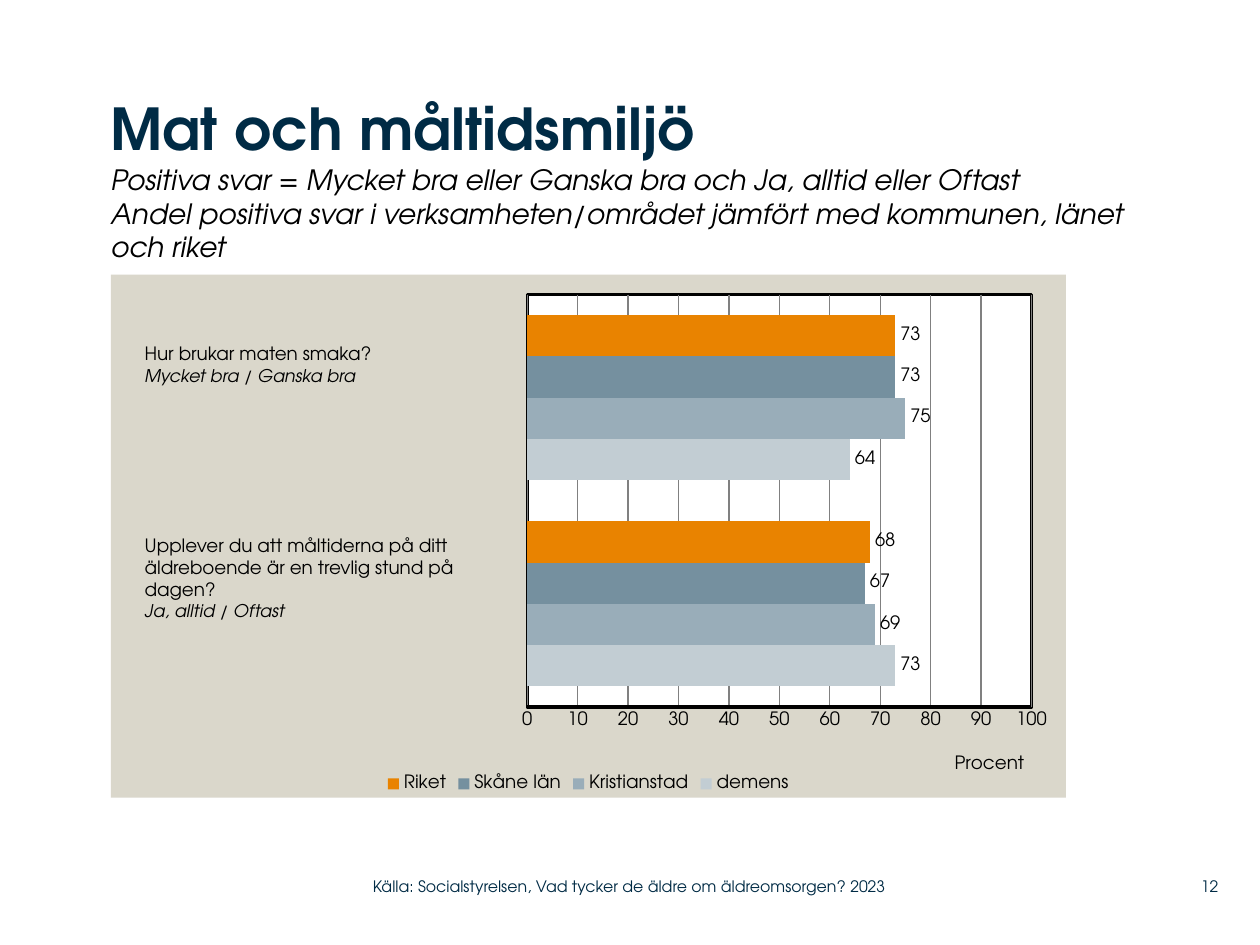
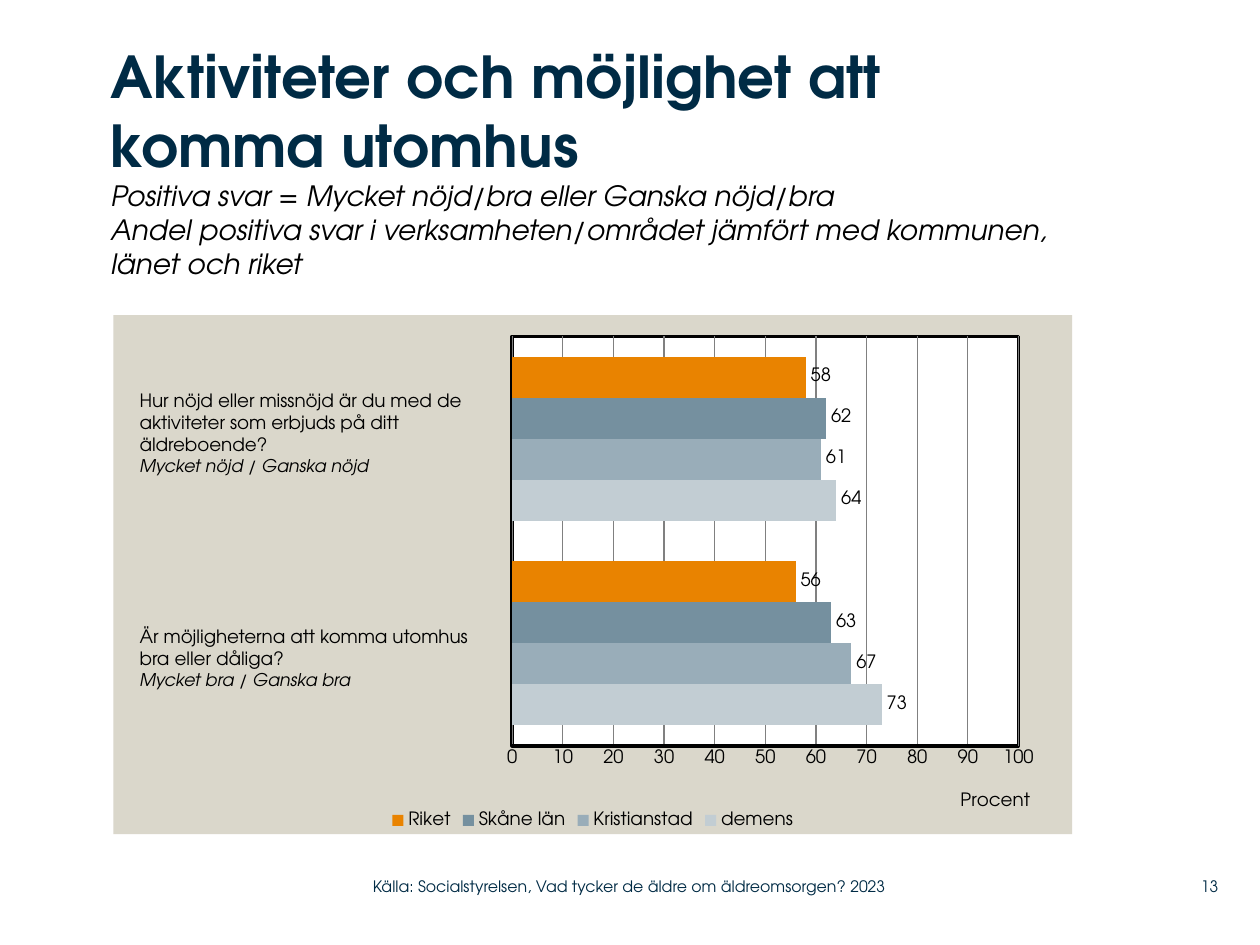
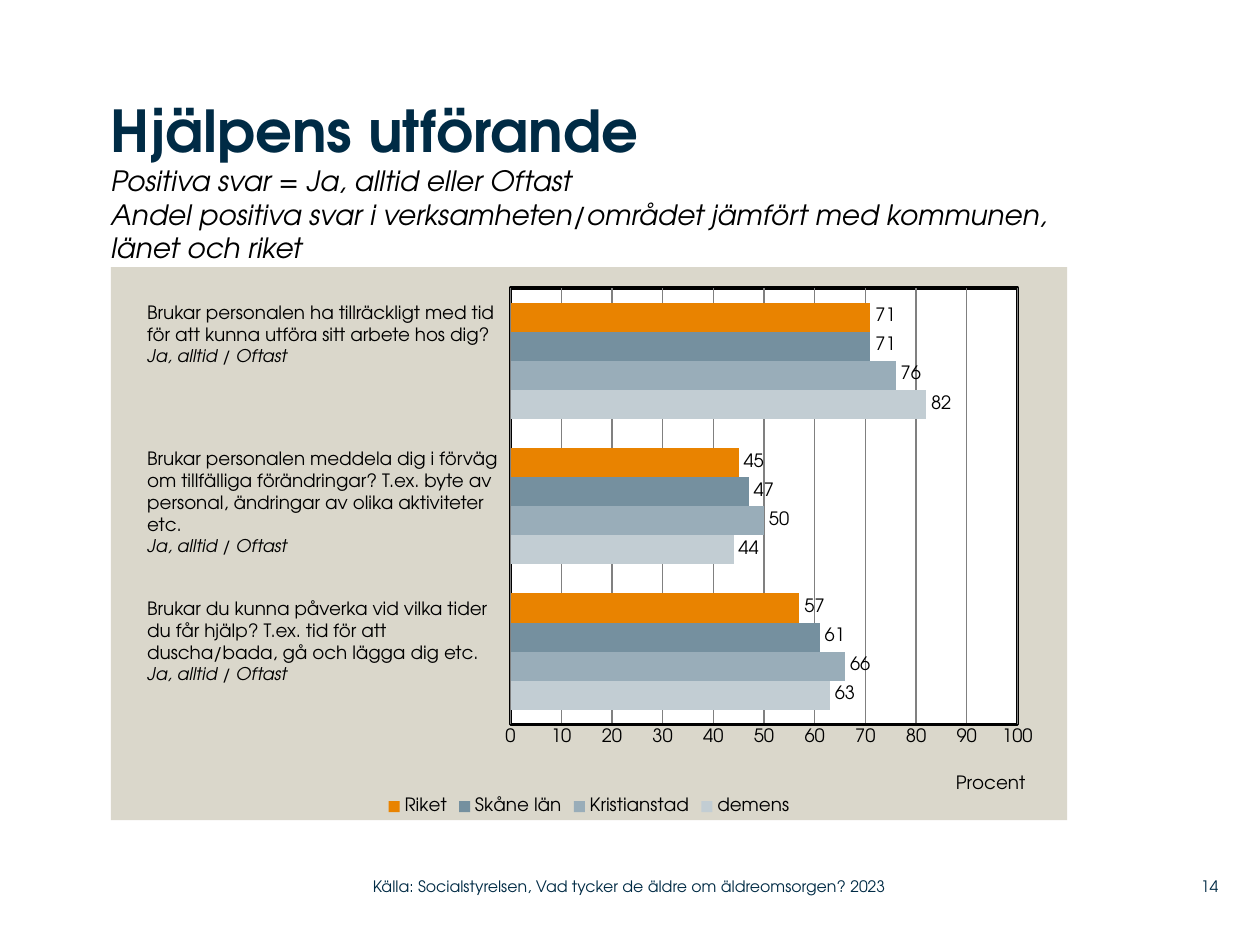
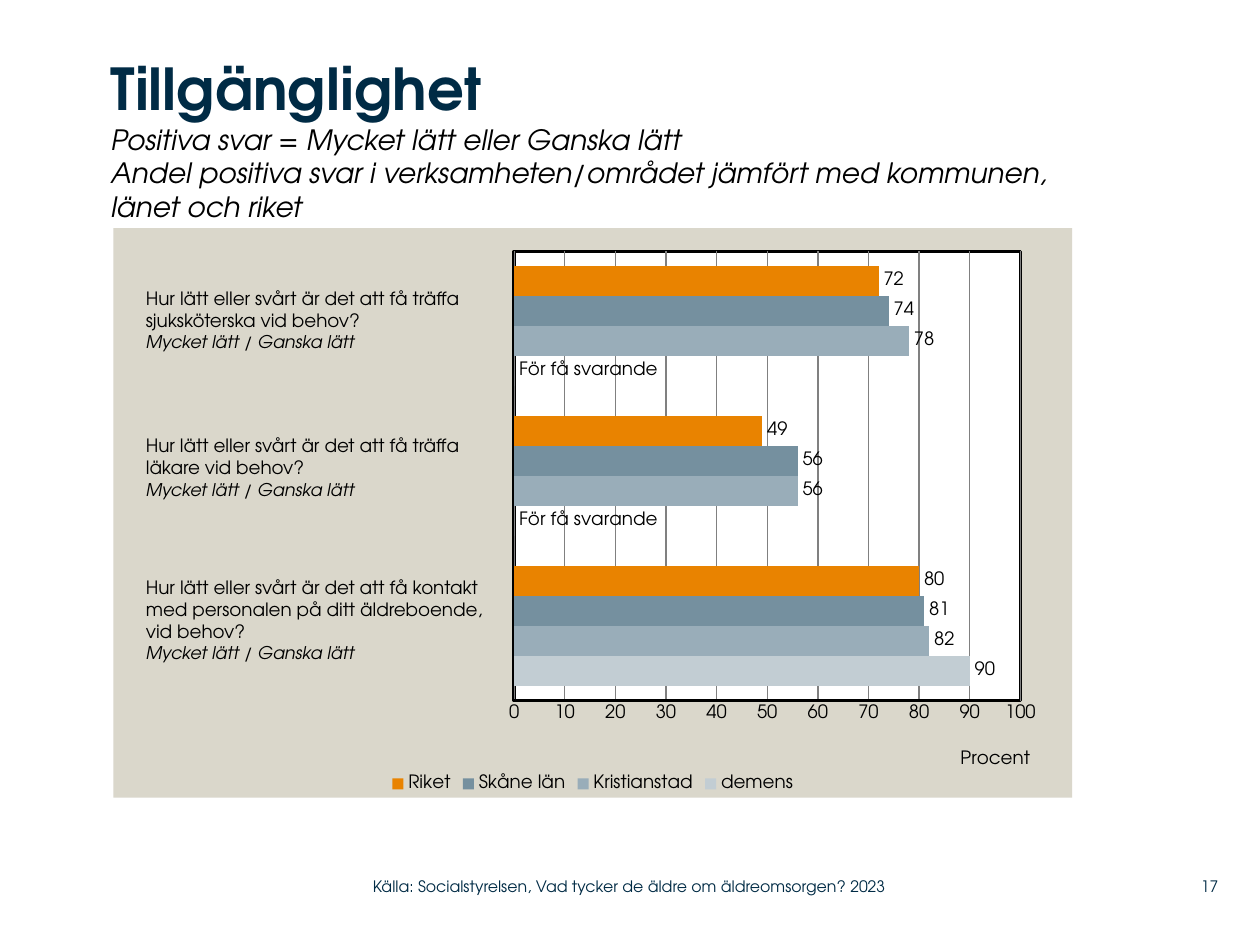
from lxml import etree
from pptx import Presentation
from pptx import util as u
from pptx.chart import data as chart_data
from pptx.dml import color
from pptx.enum import chart as kinds, text
from pptx.oxml import ns, parse_xml

FONT = "TeX Gyre Adventor"
NAVY, BLACK, WHITE = "002B45", "000000", "FFFFFF"
PANEL, GRID = "DAD7CB", "808080"
SERIES = {"demens": "C2CDD3", "Kristianstad": "99ADB9",
          "Skåne län": "75909F", "Riket": "E98300"}
COMPARISON = ("Andel positiva svar i verksamheten/området jämfört med "
              "kommunen, länet och riket")
SOURCE = "Källa: Socialstyrelsen, Vad tycker de äldre om äldreomsorgen? 2023"
TOO_FEW = "För få svarande"

SLIDES = [
    dict(
        number=12, title="Mat och måltidsmiljö", title_box=(0.88, 0.74, 8.42, 1.44),
        positive="Positiva svar = Mycket bra eller Ganska bra och Ja, alltid eller Oftast",
        chart_box=(0.88, 2.18, 7.58, 4.15), plot=(0.436, 0.038, 0.528, 0.789),
        values=[(73, 64), (69, 75), (67, 73), (68, 73)],
        questions=[
            ((1.05, 2.67, 2.77, 0.63),
             ["Hur brukar maten smaka?", "Mycket bra / Ganska bra"]),
            ((1.05, 4.19, 2.77, 0.98),
             ["Upplever du att måltiderna på ditt äldreboende är en trevlig stund på",
              "dagen?", "Ja, alltid / Oftast"]),
        ]),
    dict(
        number=13, title="Aktiviteter och möjlighet att komma utomhus",
        title_box=(0.88, 0.32, 7.8, 1.89),
        positive="Positiva svar = Mycket nöjd/bra eller Ganska nöjd/bra",
        chart_box=(0.9, 2.5, 7.61, 4.12), plot=(0.416, 0.041, 0.528, 0.789),
        values=[(73, 64), (67, 61), (63, 62), (56, 58)],
        questions=[
            ((1.01, 3.04, 3, 0.98),
             ["Hur nöjd eller missnöjd är du med de aktiviteter som erbjuds på ditt "
              "äldreboende?", "Mycket nöjd / Ganska nöjd"]),
            ((1.01, 4.91, 3.01, 0.81),
             ["Är möjligheterna att komma utomhus", "bra eller dåliga?",
              "Mycket bra / Ganska bra"]),
        ]),
    dict(
        number=14, title="Hjälpens utförande", title_box=(0.88, 0.75, 7.79, 1.21),
        positive="Positiva svar = Ja, alltid eller Oftast",
        chart_box=(0.88, 2.12, 7.59, 4.39), plot=(0.418, 0.038, 0.53, 0.789),
        values=[(63, 44, 82), (66, 50, 76), (61, 47, 71), (57, 45, 71)],
        questions=[
            ((1.07, 2.34, 2.97, 0.81),
             ["Brukar personalen ha tillräckligt med tid",
              "för att kunna utföra sitt arbete hos dig?", "Ja, alltid / Oftast"]),
            ((1.07, 3.5, 2.99, 0.98),
             ["Brukar personalen meddela dig i förväg om tillfälliga förändringar? "
              "T.ex. byte av personal, ändringar av olika aktiviteter etc.",
              "Ja, alltid / Oftast"]),
            ((1.07, 4.69, 2.97, 0.81),
             ["Brukar du kunna påverka vid vilka tider", "du får hjälp? T.ex. tid för att",
              "duscha/bada, gå och lägga dig etc.", "Ja, alltid / Oftast"]),
        ]),
    dict(
        number=17, title="Tillgänglighet", title_box=(0.88, 0.42, 7.77, 1.39),
        positive="Positiva svar = Mycket lätt eller Ganska lätt",
        chart_box=(0.9, 1.81, 7.61, 4.52), plot=(0.418, 0.041, 0.528, 0.789),
        values=[(90, 0, 0), (82, 56, 78), (81, 56, 74), (80, 49, 72)],
        questions=[
            ((1.06, 2.23, 2.99, 0.81),
             ["Hur lätt eller svårt är det att få träffa sjuksköterska vid behov?",
              "Mycket lätt / Ganska lätt"]),
            ((1.06, 3.4, 2.93, 0.81),
             ["Hur lätt eller svårt är det att få träffa", "läkare vid behov?",
              "Mycket lätt / Ganska lätt"]),
            ((1.06, 4.52, 3.01, 0.98),
             ["Hur lätt eller svårt är det att få kontakt",
              "med personalen på ditt äldreboende,", "vid behov?",
              "Mycket lätt / Ganska lätt"]),
        ]),
]


def rgb(value):
    return color.RGBColor.from_string(value)


def inches(box):
    return [u.Inches(length) for length in box]


def style(font, size, fill=BLACK, bold=False, italic=False):
    font.name, font.size = FONT, u.Pt(size)
    font.bold, font.italic = bold, italic
    font.color.rgb = rgb(fill)


def add_text(page, box, lines, inset=True, align=None, anchor=text.MSO_ANCHOR.TOP):
    frame = page.shapes.add_textbox(*inches(box)).text_frame
    frame.word_wrap = True
    frame.vertical_anchor = anchor
    if not inset:
        frame.margin_left = frame.margin_right = 0
        frame.margin_top = frame.margin_bottom = 0
    for index, (words, look) in enumerate(lines):
        para = frame.add_paragraph() if index else frame.paragraphs[0]
        para.text = words
        para.alignment = align
        style(para.font, **look)
    return frame


def add_title(page, box, title, positive):
    detail = dict(size=16, italic=True)
    add_text(page, box, [(title, dict(size=33, fill=NAVY, bold=True)),
                         (positive, detail), (COMPARISON, detail)], inset=False)


def add_question(page, box, lines):
    *question, answers = lines
    styled = [(line, dict(size=10.5)) for line in question]
    styled.append((answers, dict(size=10, italic=True)))
    frame = add_text(page, box, styled)
    frame.auto_size = text.MSO_AUTO_SIZE.SHAPE_TO_FIT_TEXT


def add_footer(page, number):
    look = dict(size=9, fill=NAVY)
    middle = text.MSO_ANCHOR.MIDDLE
    add_text(page, (9.2, 6.89, 0.47, 0.29), [(str(number), look)], inset=False,
             align=text.PP_ALIGN.RIGHT, anchor=middle)
    add_text(page, (2.96, 6.89, 4.43, 0.29), [(SOURCE, look)], inset=False, anchor=middle)


def set_layout(parent, index, inner=False, **sizes):
    for old in parent.findall(ns.qn("c:layout")):
        parent.remove(old)
    layout = etree.Element(ns.qn("c:layout"))
    manual = etree.SubElement(layout, ns.qn("c:manualLayout"))
    settings = [("layoutTarget", "inner")] if inner else []
    settings += [("xMode", "edge"), ("yMode", "edge"), *sizes.items()]
    for name, value in settings:
        etree.SubElement(manual, ns.qn(f"c:{name}")).set("val", str(value))
    parent.insert(index, layout)


def area_format(fill, line=None):
    outline = "<a:noFill/>"
    if line:
        outline = f'<a:solidFill><a:srgbClr val="{line}"/></a:solidFill>'
    return parse_xml(
        f'<c:spPr {ns.nsdecls("c", "a")}><a:solidFill><a:srgbClr val="{fill}"/></a:solidFill>'
        f'<a:ln w="{u.Pt(2)}">{outline}</a:ln></c:spPr>')


def style_axes(chart):
    chart.category_axis.visible = False
    axis = chart.value_axis
    axis.minimum_scale, axis.maximum_scale, axis.major_unit = 0, 100, 10
    axis.major_tick_mark = axis.minor_tick_mark = kinds.XL_TICK_MARK.NONE
    axis.format.line.color.rgb = rgb(BLACK)
    axis.format.line.width = u.Pt(2)
    axis.major_gridlines.format.line.color.rgb = rgb(GRID)
    axis.major_gridlines.format.line.width = u.Pt(0.75)
    style(axis.tick_labels.font, 10.5)
    para = axis.axis_title.text_frame.paragraphs[0]
    para.text = "Procent"
    style(para.font, 10.5)
    set_layout(axis.axis_title._element, 1, x=0.88, y=0.91)


def style_series(series):
    series.format.fill.solid()
    series.format.fill.fore_color.rgb = rgb(SERIES[series.name])
    outside = kinds.XL_LABEL_POSITION.OUTSIDE_END
    labels = series.data_labels
    labels.show_value = True
    labels.position = outside
    style(labels.font, 10.5)
    for index, value in enumerate(series.values):
        if value == 0:
            label = series.points[index].data_label
            para = label.text_frame.paragraphs[0]
            para.text = TOO_FEW
            style(para.font, 10.5)
            label.position = outside


def add_bars(page, box, plot_box, values):
    numbers = chart_data.CategoryChartData(number_format="0")
    numbers.categories = [str(index + 1) for index in range(len(values[0]))]
    for name, row in zip(SERIES, values):
        numbers.add_series(name, row)
    chart = page.shapes.add_chart(
        kinds.XL_CHART_TYPE.BAR_CLUSTERED, *inches(box), numbers).chart
    chart.has_title = False
    style(chart.font, 10.5)
    chart.has_legend = True
    chart.legend.position = kinds.XL_LEGEND_POSITION.BOTTOM
    chart.legend.include_in_layout = False
    style(chart.legend.font, 10.5)
    style_axes(chart)
    plot = chart.plots[0]
    plot.gap_width, plot.overlap, plot.vary_by_categories = 100, 0, False
    for series in plot.series:
        style_series(series)
    body = chart.element.find(ns.qn("c:chart"))
    body.addnext(area_format(PANEL))
    area = body.find(ns.qn("c:plotArea"))
    area.append(area_format(WHITE, BLACK))
    set_layout(area, 0, inner=True, **dict(zip("xywh", plot_box)))


def main():
    deck = Presentation()
    deck.slide_width, deck.slide_height = u.Inches(10), u.Inches(7.5)
    for content in SLIDES:
        page = deck.slides.add_slide(deck.slide_layouts[6])
        add_bars(page, content["chart_box"], content["plot"], content["values"])
        add_title(page, content["title_box"], content["title"], content["positive"])
        for box, lines in content["questions"]:
            add_question(page, box, lines)
        add_footer(page, content["number"])
    deck.save("out.pptx")


if __name__ == "__main__":
    main()
